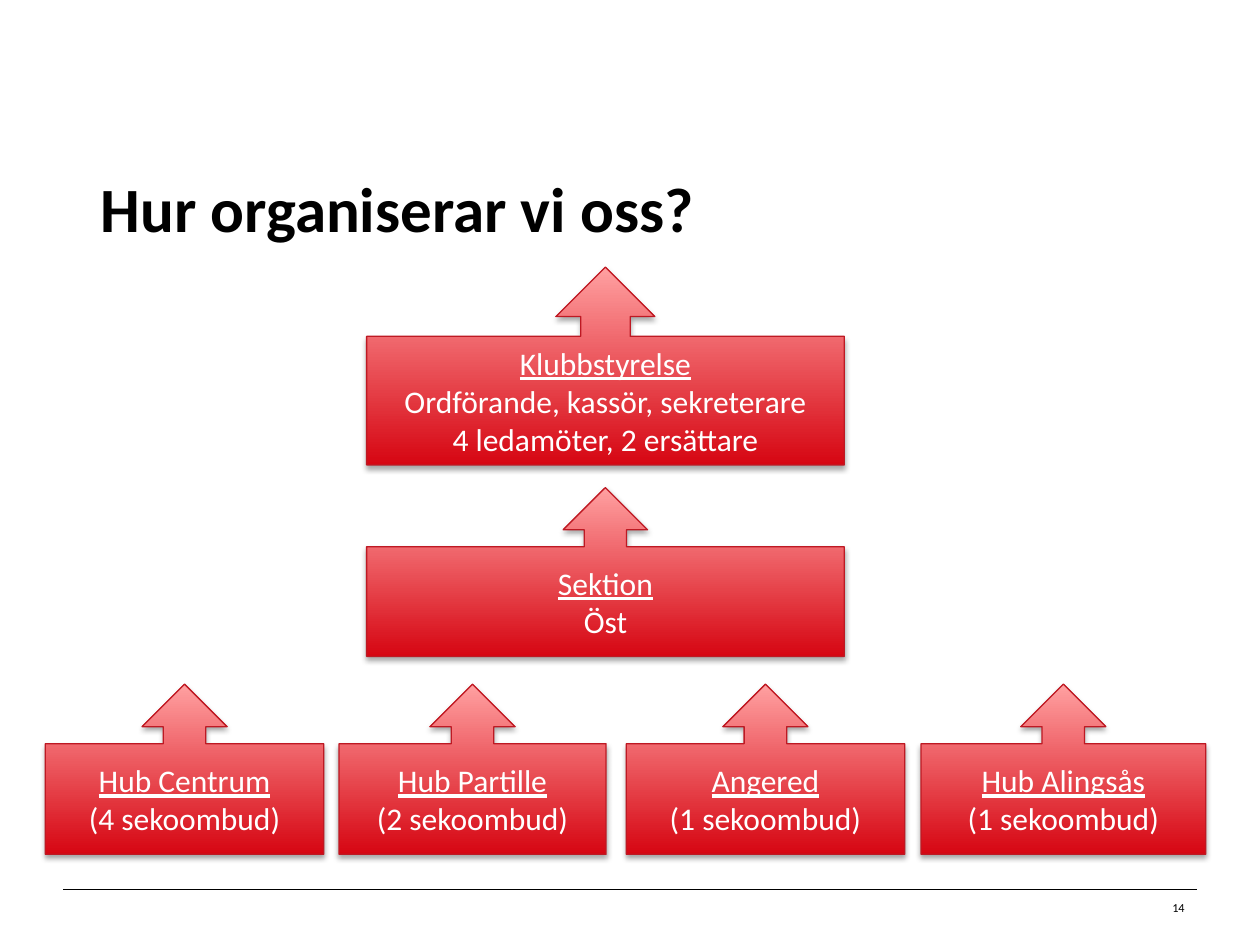
from lxml import etree
from pptx import Presentation
from pptx.dml.color import RGBColor
from pptx.enum.shapes import MSO_CONNECTOR, MSO_SHAPE
from pptx.enum.text import MSO_ANCHOR, MSO_AUTO_SIZE, PP_ALIGN
from pptx.oxml.ns import qn
from pptx.util import Inches, Pt

CALLOUT = MSO_SHAPE.UP_ARROW_CALLOUT
STRAIGHT = MSO_CONNECTOR.STRAIGHT
MIDDLE = MSO_ANCHOR.MIDDLE
NO_AUTOFIT = MSO_AUTO_SIZE.NONE
LEFT, CENTER, RIGHT = PP_ALIGN.LEFT, PP_ALIGN.CENTER, PP_ALIGN.RIGHT

COLORS = {
    "text": "000000",
    "callout_text": "FFFFFF",
    "gradient_bottom": "D60612",
    "gradient_top": "FFA0A1",
    "outline": "BE1923",
    "shadow": "000000",
}
FONT = "Calibri"
HUB_TOP, HUB_HEIGHT = 5.43, 1.35
BOARD_LEFT, BOARD_WIDTH = 2.91, 3.79

UNITS = [
    (BOARD_LEFT, 2.12, BOARD_WIDTH, 1.57,
     ["Klubbstyrelse", "Ordförande, kassör, sekreterare", "4 ledamöter, 2 ersättare"]),
    (BOARD_LEFT, 3.87, BOARD_WIDTH, 1.34, ["Sektion", "Öst"]),
]
HUBS = [
    (0.36, 2.21, "Hub Centrum", 4),
    (2.69, 2.12, "Hub Partille", 2),
    (4.97, 2.21, "Angered", 1),
    (7.31, 2.26, "Hub Alingsås", 1),
]


def rgb(name):
    return RGBColor.from_string(COLORS[name])


def write_line(paragraph, text, color, align, **font_format):
    paragraph.alignment = align
    run = paragraph.add_run()
    run.text = text
    run.font.color.rgb = rgb(color)
    for attribute, value in {"name": FONT, **font_format}.items():
        setattr(run.font, attribute, value)


def add_effects(shape):
    return etree.SubElement(shape._element.spPr, qn("a:effectLst"))


def add_drop_shadow(shape):
    shadow = etree.SubElement(add_effects(shape), qn("a:outerShdw"), {
        "blurRad": str(Pt(3.1)), "dist": str(Pt(1.8)),
        "dir": "5400000", "rotWithShape": "0"})
    color = etree.SubElement(shadow, qn("a:srgbClr"), val=COLORS["shadow"])
    etree.SubElement(color, qn("a:alpha"), val="35000")


def add_title(slide, text):
    title = slide.shapes.title
    place = {"left": 0.7, "top": 1.1, "width": 8.8, "height": 1.25}
    for attribute, value in place.items():
        setattr(title, attribute, Inches(value))
    frame = title.text_frame
    frame.auto_size = NO_AUTOFIT
    frame.vertical_anchor = MIDDLE
    heading = frame.paragraphs[0]
    heading.line_spacing = Pt(32)
    write_line(heading, text, "text", LEFT, size=Pt(36), bold=True)


def add_footer(slide, number):
    rule = slide.shapes.add_connector(
        STRAIGHT, Inches(0.5), Inches(7.06), Inches(9.5), Inches(7.06))
    rule.line.color.rgb = rgb("text")
    rule.line.width = Pt(0.25)
    add_effects(rule)
    page = slide.shapes.add_textbox(
        Inches(8.55), Inches(7.06), Inches(0.95), Inches(0.29))
    frame = page.text_frame
    frame.word_wrap = True
    frame.vertical_anchor = MIDDLE
    write_line(frame.paragraphs[0], number, "text", RIGHT, size=Pt(7))


def add_callout(slide, left, top, width, height, lines):
    callout = slide.shapes.add_shape(
        CALLOUT, Inches(left), Inches(top), Inches(width), Inches(height))
    callout.fill.gradient()
    callout.fill.gradient_angle = 90
    stops = zip(callout.fill.gradient_stops, ("gradient_bottom", "gradient_top"), (0, 1))
    for stop, color, position in stops:
        stop.color.rgb = rgb(color)
        stop.position = position
    callout.line.color.rgb = rgb("outline")
    callout.line.width = Pt(0.75)
    add_drop_shadow(callout)
    frame = callout.text_frame
    frame.word_wrap = True
    frame.vertical_anchor = MIDDLE
    for index, text in enumerate(lines):
        paragraph = frame.add_paragraph() if index else frame.paragraphs[0]
        write_line(paragraph, text, "callout_text", CENTER,
                   size=Pt(18), underline=index == 0)


def main():
    presentation = Presentation()
    presentation.slide_width = Inches(10)
    presentation.slide_height = Inches(7.5)
    slide = presentation.slides.add_slide(presentation.slide_layouts[5])
    add_footer(slide, "14")
    add_title(slide, "Hur organiserar vi oss?")
    for unit in UNITS:
        add_callout(slide, *unit)
    for left, width, name, delegates in HUBS:
        add_callout(slide, left, HUB_TOP, width, HUB_HEIGHT,
                    [name, f"({delegates} sekoombud)"])
    presentation.save("out.pptx")


if __name__ == "__main__":
    main()
